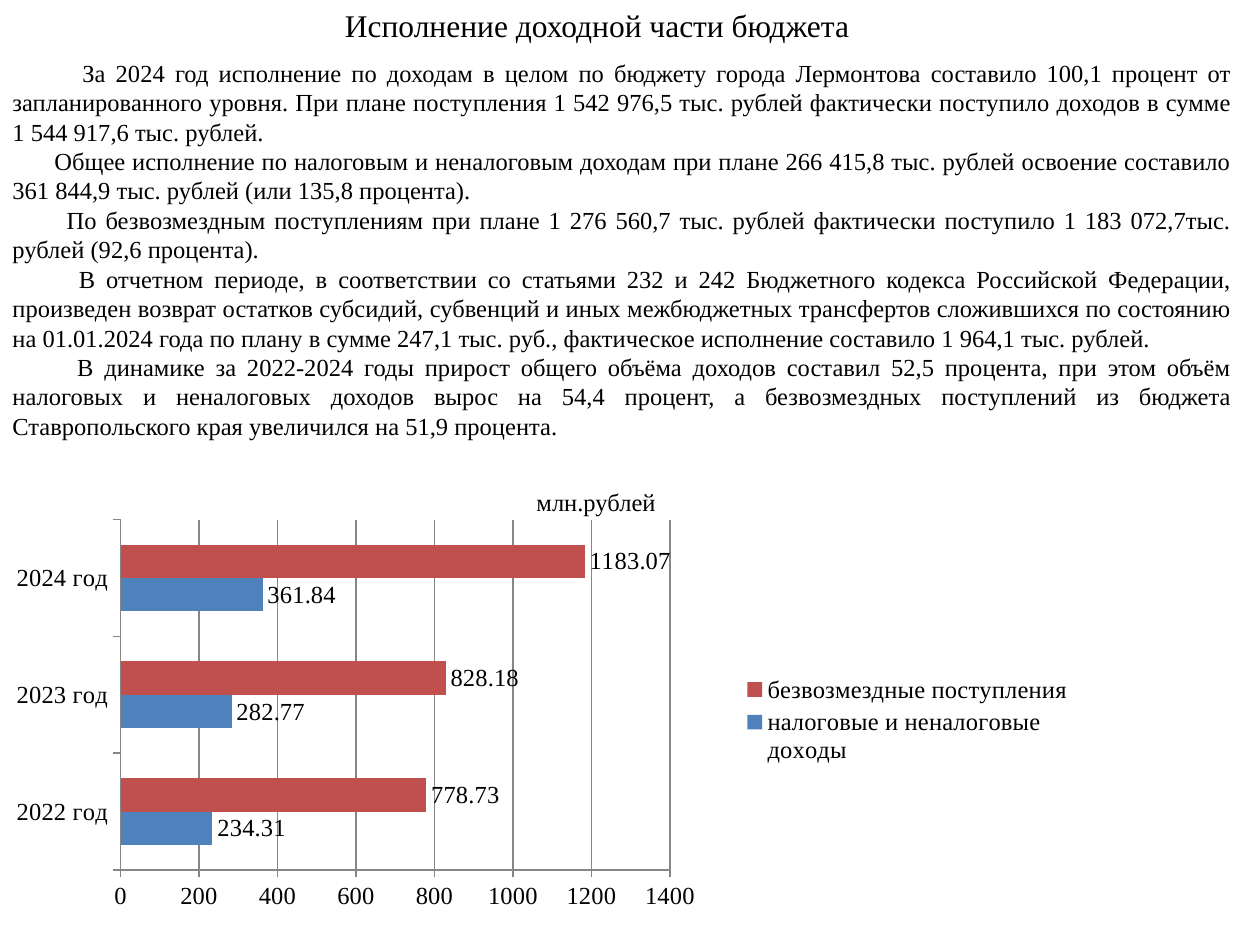
"""Builds the slide on city budget revenue: title, report text and bar chart."""
from dataclasses import dataclass

from lxml import etree
from pptx import Presentation
from pptx import util as u
from pptx.chart import data as cd
from pptx.dml.color import RGBColor
from pptx.enum import chart as ce, text as te
from pptx.oxml import ns

FONT = "Times New Roman"
BLACK = RGBColor(0x00, 0x00, 0x00)
GREY = RGBColor(0x86, 0x86, 0x86)
BLUE = RGBColor(0x4F, 0x81, 0xBD)
RED = RGBColor(0xC0, 0x50, 0x4D)


@dataclass(frozen=True)
class Box:
    left: float
    top: float
    width: float
    height: float

    def pts(self) -> list:
        return [u.Pt(v) for v in (self.left, self.top, self.width, self.height)]


@dataclass(frozen=True)
class Para:
    text: str
    indent: float = 0


@dataclass(frozen=True)
class Series:
    name: str
    values: tuple
    color: RGBColor


REPORT = (
    Para("За 2024 год исполнение по доходам в целом по бюджету города Лермонтова "
         "составило 100,1 процент от запланированного уровня. При плане поступления "
         "1 542 976,5 тыс. рублей фактически поступило доходов в сумме "
         "1 544 917,6 тыс. рублей.", 40),
    Para("Общее исполнение по налоговым и неналоговым доходам при плане "
         "266 415,8 тыс. рублей освоение составило 361 844,9 тыс. рублей "
         "(или 135,8 процента).", 24),
    Para("По безвозмездным поступлениям при плане 1 276 560,7 тыс. рублей "
         "фактически поступило 1 183 072,7тыс. рублей (92,6 процента).", 31),
    Para("В отчетном периоде, в соответствии со статьями 232 и 242 Бюджетного кодекса "
         "Российской Федерации, произведен возврат остатков субсидий, субвенций и иных "
         "межбюджетных трансфертов сложившихся по состоянию на 01.01.2024 года по плану "
         "в сумме 247,1 тыс. руб., фактическое исполнение составило "
         "1 964,1 тыс. рублей.", 38),
    Para("В динамике за 2022-2024 годы прирост общего объёма доходов составил "
         "52,5 процента, при этом объём налоговых и неналоговых доходов вырос на "
         "54,4 процент, а безвозмездных поступлений из бюджета Ставропольского края "
         "увеличился на 51,9 процента.", 37),
)
YEARS = ("2022 год", "2023 год", "2024 год")
INCOME = (
    Series("налоговые и неналоговые доходы", (234.31, 282.77, 361.84), BLUE),
    Series("безвозмездные поступления", (778.73, 828.18, 1183.07), RED),
)
PLOT = {"x": 0.111, "y": 0.044, "w": 0.506, "h": 0.799}


def style(font, size: float = 14) -> None:
    font.name = FONT
    font.size = u.Pt(size)
    font.color.rgb = BLACK


def write(slide, box: Box, *paras: Para, size: float = 14, wrap: bool = False,
          align=te.PP_ALIGN.LEFT) -> None:
    frame = slide.shapes.add_textbox(*box.pts()).text_frame
    frame.word_wrap = wrap
    frame.auto_size = te.MSO_AUTO_SIZE.SHAPE_TO_FIT_TEXT
    for i, item in enumerate(paras):
        para = frame.add_paragraph() if i else frame.paragraphs[0]
        para.alignment = align
        if item.indent:
            props = para._p.get_or_add_pPr()
            props.set("marL", "0")
            props.set("indent", str(u.Pt(item.indent)))
        run = para.add_run()
        run.text = item.text
        style(run.font, size)


def place(chart) -> None:
    area = chart._chartSpace.chart.plotArea
    for old in area.findall(ns.qn("c:layout")):
        area.remove(old)
    layout = etree.Element(ns.qn("c:layout"))
    manual = etree.SubElement(layout, ns.qn("c:manualLayout"))
    modes = {"layoutTarget": "inner", "xMode": "edge", "yMode": "edge"}
    for tag, val in {**modes, **PLOT}.items():
        etree.SubElement(manual, ns.qn(f"c:{tag}")).set("val", str(val))
    area.insert(0, layout)


def draw(slide, box: Box, cats: tuple, rows: tuple) -> None:
    data = cd.CategoryChartData()
    data.categories = cats
    for row in rows:
        data.add_series(row.name, row.values)
    kind = ce.XL_CHART_TYPE.BAR_CLUSTERED
    chart = slide.shapes.add_chart(kind, *box.pts(), data).chart
    style(chart.font)
    chart.has_title = False
    chart.has_legend = True
    chart.legend.position = ce.XL_LEGEND_POSITION.RIGHT
    chart.legend.include_in_layout = False
    place(chart)
    plot = chart.plots[0]
    plot.gap_width, plot.overlap, plot.vary_by_categories = 150, 0, False
    for series, row in zip(plot.series, rows):
        series.format.fill.solid()
        series.format.fill.fore_color.rgb = row.color
        series.invert_if_negative = False
        series.data_labels.show_value = True
        series.data_labels.position = ce.XL_LABEL_POSITION.OUTSIDE_END
        style(series.data_labels.font)
    axis = chart.value_axis
    axis.minimum_scale, axis.maximum_scale, axis.major_unit = 0, 1400, 200
    axis.has_major_gridlines = True
    for part in (axis, chart.category_axis):
        part.major_tick_mark = ce.XL_TICK_MARK.OUTSIDE
        style(part.tick_labels.font)
    for line in (axis, chart.category_axis, axis.major_gridlines):
        line.format.line.color.rgb = GREY
        line.format.line.width = u.Pt(0.75)


def main() -> None:
    prs = Presentation()
    prs.slide_width, prs.slide_height = u.Pt(720), u.Pt(540)
    slide = prs.slides.add_slide(prs.slide_layouts[6])
    write(slide, Box(190, 0, 305.5, 29), Para("Исполнение доходной части бюджета"), size=18)
    write(slide, Box(0, 29.5, 711, 227.5), *REPORT, wrap=True, align=te.PP_ALIGN.JUSTIFY)
    draw(slide, Box(0, 286, 620.5, 250.5), YEARS, INCOME)
    write(slide, Box(299.5, 274.5, 83.5, 24.5), Para("млн.рублей"))
    prs.save("out.pptx")


if __name__ == "__main__":
    main()
